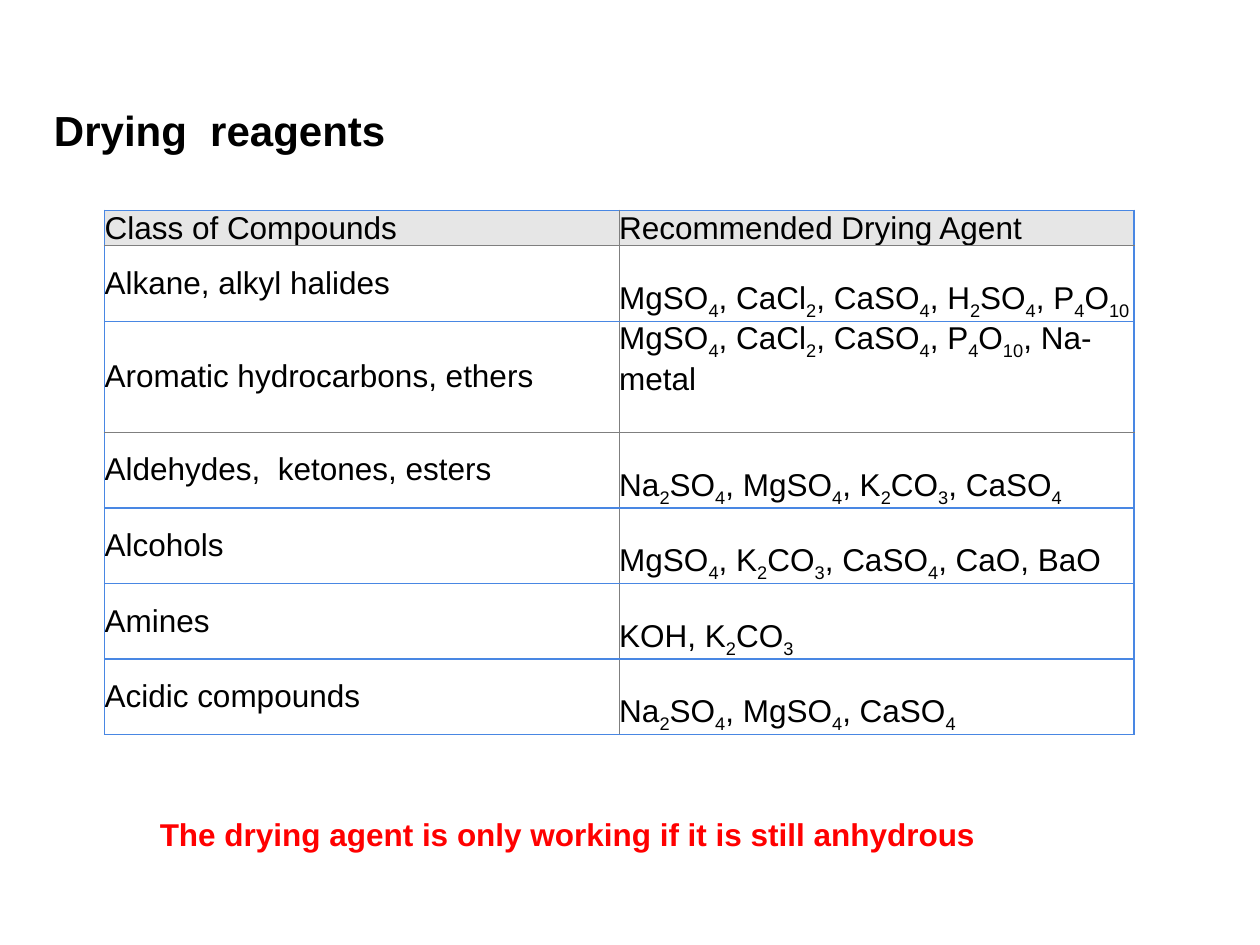
from itertools import groupby

from lxml import etree
from pptx import Presentation, util as u
from pptx.dml.color import RGBColor
from pptx.enum.text import MSO_ANCHOR as Anchor
from pptx.oxml.ns import qn

BLACK = RGBColor(0x00, 0x00, 0x00)
RED = RGBColor(0xFF, 0x00, 0x00)
HEAD = RGBColor(0xE6, 0xE6, 0xE6)
BLUE = RGBColor(0x49, 0x87, 0xE3)
GREY = RGBColor(0x7F, 0x7F, 0x7F)

TITLE = "Drying  reagents"
NOTE = "The drying agent is only working if it is still anhydrous"
HEADER = ("Class of Compounds", "Recommended Drying Agent")
AGENTS = [
    ("Alkane, alkyl halides", "MgSO4, CaCl2, CaSO4, H2SO4, P4O10"),
    ("Aromatic hydrocarbons, ethers", "MgSO4, CaCl2, CaSO4, P4O10, Na-metal"),
    ("Aldehydes,  ketones, esters", "Na2SO4, MgSO4, K2CO3, CaSO4"),
    ("Alcohols", "MgSO4, K2CO3, CaSO4, CaO, BaO"),
    ("Amines", "KOH, K2CO3"),
    ("Acidic compounds", "Na2SO4, MgSO4, CaSO4"),
]
LINE, ROW, TALL = 0.28, 0.6, 0.88
TALL_ROW = 2
GREY_RULES = (1, 3)  # rows whose top rule is grey


def write(frame, words, size=18, color=BLACK, bold=False):
    """Fill a frame, setting every digit as a subscript."""
    frame.word_wrap = True
    para = frame.paragraphs[0]
    for digit, chars in groupby(words, str.isdigit):
        run = para.add_run()
        run.text = "".join(chars)
        font = run.font
        font.name, font.size, font.bold = "Arial", u.Pt(size), bold
        font.color.rgb = color
        if digit:
            run._r.get_or_add_rPr().set("baseline", "-25000")


def label(slide, words, place, anchor=Anchor.TOP, **style):
    box = slide.shapes.add_textbox(*map(u.Inches, place))
    box.text_frame.vertical_anchor = anchor
    write(box.text_frame, words, **style)


def border(cell, sides):
    """Draw cell borders; sides maps L, R, T, B to (colour, points)."""
    props = cell._tc.get_or_add_tcPr()
    for spot, side in enumerate("LRTB"):
        color, width = sides[side]
        line = etree.Element(qn(f"a:ln{side}"), w=str(u.Pt(width)))
        fill = etree.SubElement(line, qn("a:solidFill"))
        etree.SubElement(fill, qn("a:srgbClr"), val=str(color))
        props.insert(spot, line)


def rule(row):
    return (GREY, 0.5) if row in GREY_RULES else (BLUE, 1)


def grid(slide):
    rows = [HEADER] + AGENTS
    tall = [LINE] + [ROW] * len(AGENTS)
    tall[TALL_ROW] = TALL
    place = map(u.Inches, (0.83, 1.67, 8.17, sum(tall)))
    table = slide.shapes.add_table(len(rows), 2, *place).table
    for r, pair in enumerate(rows):
        table.rows[r].height = u.Inches(tall[r])
        for c, words in enumerate(pair):
            cell = table.cell(r, c)
            cell.margin_left = cell.margin_right = 0
            cell.margin_top = cell.margin_bottom = 0
            cell.vertical_anchor = Anchor.MIDDLE
            if c and r == TALL_ROW:
                cell.vertical_anchor = Anchor.TOP
            elif c and r:
                cell.vertical_anchor = Anchor.BOTTOM
            if r:
                cell.fill.background()
            else:
                cell.fill.solid()
                cell.fill.fore_color.rgb = HEAD
            edge, mid = (BLUE, 1), (GREY, 0.5)
            border(cell, {"L": mid if c else edge, "R": edge if c else mid,
                          "T": rule(r), "B": rule(r + 1)})
            write(cell.text_frame, words)


def main():
    deck = Presentation()
    deck.slide_width, deck.slide_height = u.Inches(10), u.Inches(7.5)
    slide = deck.slides.add_slide(deck.slide_layouts[6])
    grid(slide)
    label(slide, TITLE, (0.33, 0.72, 5.42, 0.62), Anchor.MIDDLE,
          size=24, bold=True)
    label(slide, NOTE, (1.17, 6.42, 7.83, 0.4), color=RED, bold=True)
    deck.save("out.pptx")


if __name__ == "__main__":
    main()
